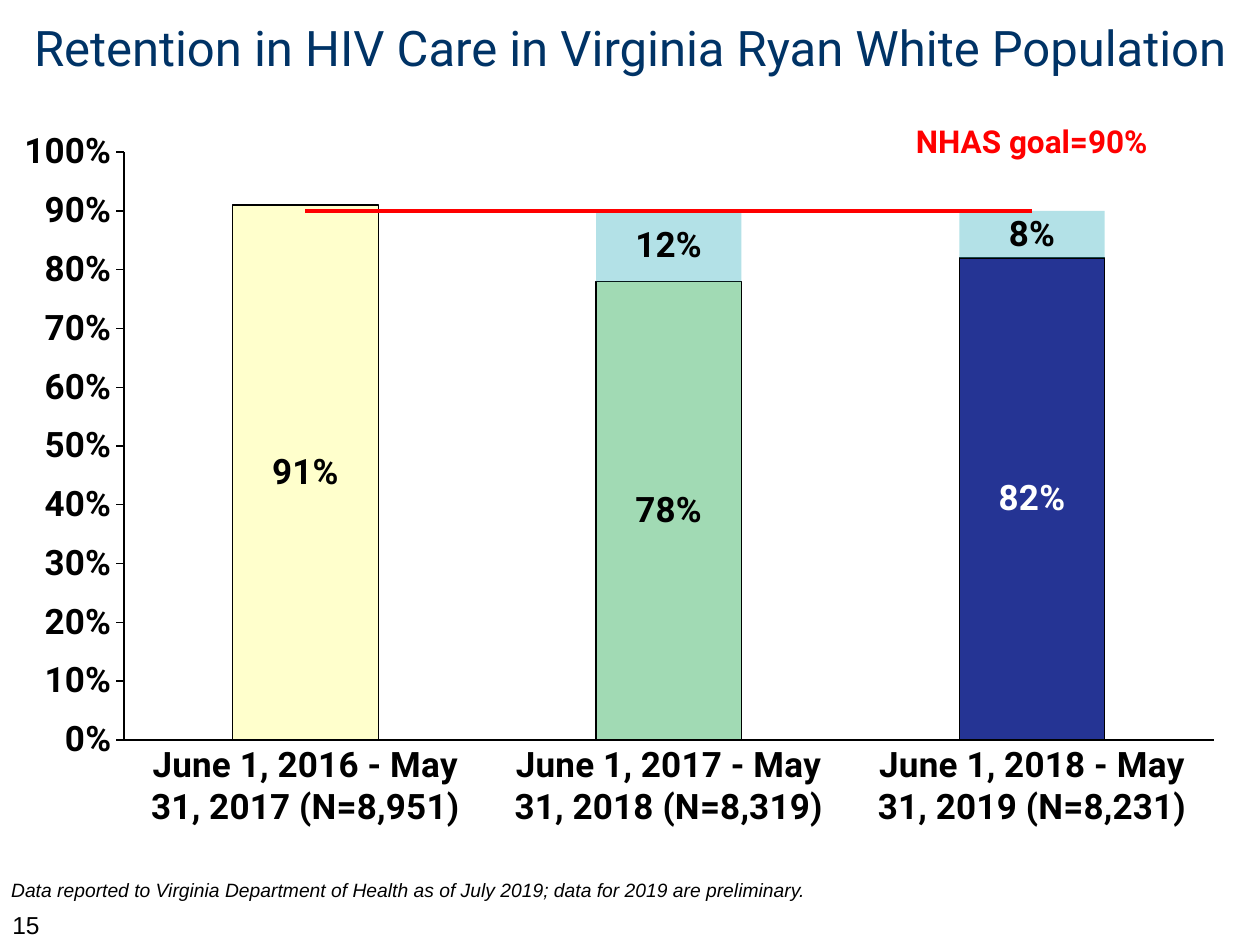
from pptx import Presentation
from pptx.chart.data import CategoryChartData
from pptx.dml.color import RGBColor
from pptx.enum.chart import XL_CHART_TYPE as ChartType, XL_TICK_MARK as Tick
from pptx.enum.text import MSO_ANCHOR as Anchor, PP_ALIGN as Align
from pptx.oxml import parse_xml
from pptx.oxml.ns import nsdecls, qn
from pptx.util import Inches, Pt

WIDTH, HEIGHT = 10, 7.5
PERIODS = ["June 1, 2016 - May 31, 2017 (N=8,951)",
           "June 1, 2017 - May 31, 2018 (N=8,319)",
           "June 1, 2018 - May 31, 2019 (N=8,231)"]
RETAINED = [0.91, 0.78, 0.82]
GAP = [None, 0.12, 0.08]
GOAL = [0.9] * 3
BAR_COLORS = ["FFFFCC", "A1DAB4", "253494"]


def color(value):
    return RGBColor.from_string(value)


def style_font(font, name, size, value, bold=False, italic=False):
    font.name, font.size = name, Pt(size)
    font.bold, font.italic = bold, italic
    font.color.rgb = color(value)


def paint(fmt, fill):
    """Fill a chart element and give it a thin black outline."""
    fmt.fill.solid()
    fmt.fill.fore_color.rgb = color(fill)
    style_line(fmt.line)


def style_line(line, value="000000", width=0.75):
    line.color.rgb = color(value)
    line.width = Pt(width)


def place(shape, left, top, width, height):
    shape.left, shape.top = Inches(left), Inches(top)
    shape.width, shape.height = Inches(width), Inches(height)


def add_title(page, text):
    title = page.shapes.title
    place(title, 0, 0.09, WIDTH, 0.57)
    frame = title.text_frame
    frame.text, frame.vertical_anchor = text, Anchor.MIDDLE
    frame.word_wrap = True
    para = frame.paragraphs[0]
    para.alignment = Align.CENTER
    style_font(para.font, "Roboto", 28, "003366")


def add_text(page, text, at, *font, **weight):
    box = page.shapes.add_textbox(*map(Inches, at))
    frame = box.text_frame
    frame.text, frame.word_wrap = text, True
    style_font(frame.paragraphs[0].font, *font, **weight)


def show_labels(series):
    labels = series.data_labels
    labels.show_value = True
    labels.number_format, labels.number_format_is_linked = "0%", False
    style_font(labels.font, "Roboto", 20, "000000", bold=True)


def style_axes(chart):
    for axis in (chart.category_axis, chart.value_axis):
        axis.has_major_gridlines = False
        axis.minor_tick_mark = Tick.NONE
        style_line(axis.format.line)
    chart.category_axis.major_tick_mark = Tick.NONE
    values = chart.value_axis
    values.major_tick_mark = Tick.OUTSIDE
    values.minimum_scale, values.maximum_scale = 0, 1
    values.major_unit = 0.1
    values.tick_labels.number_format = "0%"
    values.tick_labels.number_format_is_linked = False


def move_to_line(chart, series):
    """Turn one column series into a line on the same axes."""
    style_line(series.format.line, "FF0000", 2)
    ser = series._element
    bars = ser.getparent()
    for flag in ser.findall(qn("c:invertIfNegative")):
        ser.remove(flag)
    ser.find(qn("c:spPr")).addnext(parse_xml(
        f'<c:marker {nsdecls("c")}><c:symbol val="none"/></c:marker>'))
    ser.append(parse_xml(f'<c:smooth {nsdecls("c")} val="0"/>'))
    axis_ids = "".join(f'<c:axId val="{item.get("val")}"/>'
                       for item in bars.findall(qn("c:axId")))
    lines = parse_xml(
        f'<c:lineChart {nsdecls("c")}><c:grouping val="standard"/>'
        f'<c:varyColors val="0"/><c:marker val="1"/>{axis_ids}</c:lineChart>')
    lines.find(qn("c:varyColors")).addnext(ser)
    bars.addnext(lines)


def set_plot_area(chart, left, top, width, height):
    """Fix the inner plot area, in shares of the chart's size."""
    area = chart._chartSpace.chart.plotArea
    for old in area.findall(qn("c:layout")):
        area.remove(old)
    sizes = "".join(f'<c:{key} val="{share}"/>' for key, share in
                    zip("xywh", (left, top, width, height)))
    area.insert(0, parse_xml(
        f'<c:layout {nsdecls("c")}><c:manualLayout>'
        '<c:layoutTarget val="inner"/><c:xMode val="edge"/>'
        f'<c:yMode val="edge"/>{sizes}</c:manualLayout></c:layout>'))


def add_retention_chart(page):
    data = CategoryChartData(number_format="0%")
    data.categories = PERIODS
    for number, values in enumerate((RETAINED, GAP, GOAL), 1):
        data.add_series(f"Series {number}", values)
    chart = page.shapes.add_chart(
        ChartType.COLUMN_STACKED, 0, Inches(0.92), Inches(9.83),
        Inches(5.76), data).chart
    chart.has_legend = chart.has_title = False
    style_font(chart.font, "Roboto", 20, "000000", bold=True)
    style_axes(chart)
    set_plot_area(chart, 0.1, 0.05, 0.88, 0.81)

    plot = chart.plots[0]
    plot.gap_width, plot.overlap = 150, 100
    plot.vary_by_categories = False
    retained, gap, goal = plot.series

    # Retained share, one colour per period
    paint(retained.format, "BBE0E3")
    for index, fill in enumerate(BAR_COLORS):
        paint(retained.points[index].format, fill)
    show_labels(retained)
    style_font(retained.points[2].data_label.font, "Roboto", 20, "FFFFFF",
               bold=True)

    # Distance to the goal, translucent
    gap.format.fill.solid()
    gap.format.fill.fore_color.rgb = color("41B6C4")
    tint = gap._element.find(".//" + qn("a:srgbClr"))
    tint.append(parse_xml(f'<a:alpha {nsdecls("a")} val="40000"/>'))
    show_labels(gap)

    move_to_line(chart, goal)


def main():
    deck = Presentation()
    deck.slide_width, deck.slide_height = Inches(WIDTH), Inches(HEIGHT)
    page = deck.slides.add_slide(deck.slide_layouts[5])
    add_title(page, "Retention in HIV Care in Virginia Ryan White Population")
    add_text(page, "NHAS goal=90%", (7.17, 0.92, 2.42, 0.4),
             "Roboto", 18, "FF0000", bold=True)
    add_retention_chart(page)

    # Footnote and page number
    add_text(page, "Data reported to Virginia Department of Health as of "
             "July 2019; data for 2019 are preliminary.",
             (-0.01, 6.92, 9.33, 0.29), "Arial", 11, "000000", italic=True)
    add_text(page, "15", (0, 7.17, 2.33, 0.25), "Arial", 14, "000000")
    deck.save("out.pptx")


if __name__ == "__main__":
    main()
